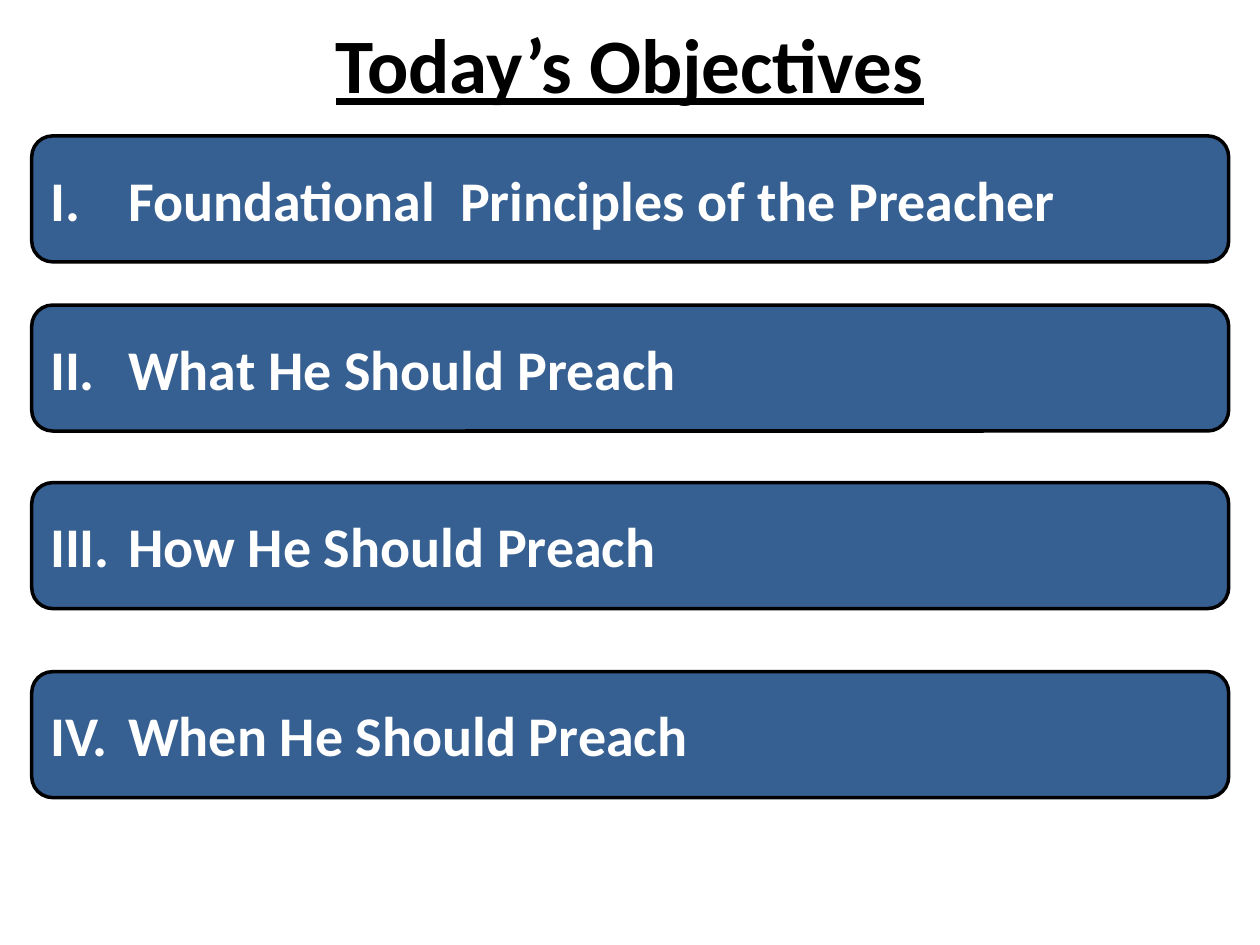
from lxml import etree
from pptx import Presentation
from pptx.dml.color import RGBColor
from pptx.enum.shapes import MSO_SHAPE
from pptx.enum.text import MSO_ANCHOR, PP_ALIGN
from pptx.oxml.ns import qn
from pptx.util import Cm, Pt

ROUNDED = MSO_SHAPE.ROUNDED_RECTANGLE
MIDDLE = MSO_ANCHOR.MIDDLE
LEFT, CENTER = PP_ALIGN.LEFT, PP_ALIGN.CENTER

COLORS = {"background": "FFFFFF", "title": "000000", "bar": "376092",
          "outline": "000000", "bar_text": "FFFFFF"}
FONT = "Calibri"
NUMBER_INDENT = Cm(1.57)
BAR_LEFT, BAR_WIDTH, BAR_HEIGHT = 0.64, 24.13, 2.54
OBJECTIVES = [
    (2.74, "Foundational  Principles of the Preacher"),
    (6.15, "What He Should Preach"),
    (9.73, "How He Should Preach"),
    (13.54, "When He Should Preach"),
]


def color(name):
    return RGBColor.from_string(COLORS[name])


def add_roman_number(paragraph, number):
    properties = paragraph._p.get_or_add_pPr()
    properties.set("marL", str(NUMBER_INDENT))
    properties.set("indent", str(-NUMBER_INDENT))
    bullet_font = etree.SubElement(properties, qn("a:buFont"))
    bullet_font.set("typeface", "+mj-lt")
    bullet = etree.SubElement(properties, qn("a:buAutoNum"))
    bullet.set("type", "romanUcPeriod")
    if number > 1:
        bullet.set("startAt", str(number))


def write_text(shape, text, *, size, fill, align=LEFT, underline=False, number=None):
    frame = shape.text_frame
    frame.word_wrap = True
    frame.vertical_anchor = MIDDLE
    paragraph = frame.paragraphs[0]
    paragraph.alignment = align
    if number is not None:
        add_roman_number(paragraph, number)
    run = paragraph.add_run()
    run.text = text
    font = run.font
    font.name = FONT
    font.size = Pt(size)
    font.bold = True
    font.underline = underline
    font.color.rgb = color(fill)


def add_title(slide, left, top, width, height):
    box = slide.shapes.add_textbox(Cm(left), Cm(top), Cm(width), Cm(height))
    write_text(box, "Today’s Objectives", size=44, fill="title",
               align=CENTER, underline=True)


def add_objective(slide, left, top, width, height, text, number):
    bar = slide.shapes.add_shape(ROUNDED, Cm(left), Cm(top), Cm(width), Cm(height))
    bar.shadow.inherit = False
    bar.fill.solid()
    bar.fill.fore_color.rgb = color("bar")
    bar.line.color.rgb = color("outline")
    bar.line.width = Pt(2)
    write_text(bar, text, size=32, fill="bar_text", number=number)


def main():
    presentation = Presentation()
    presentation.slide_width = Cm(25.4)
    presentation.slide_height = Cm(19.05)
    slide = presentation.slides.add_slide(presentation.slide_layouts[6])
    slide.background.fill.solid()
    slide.background.fill.fore_color.rgb = color("background")
    add_title(slide, 1.27, 0, 22.86, 2.54)
    for number, (top, text) in enumerate(OBJECTIVES, start=1):
        add_objective(slide, BAR_LEFT, top, BAR_WIDTH, BAR_HEIGHT, text, number)
    presentation.save("out.pptx")


if __name__ == "__main__":
    main()
